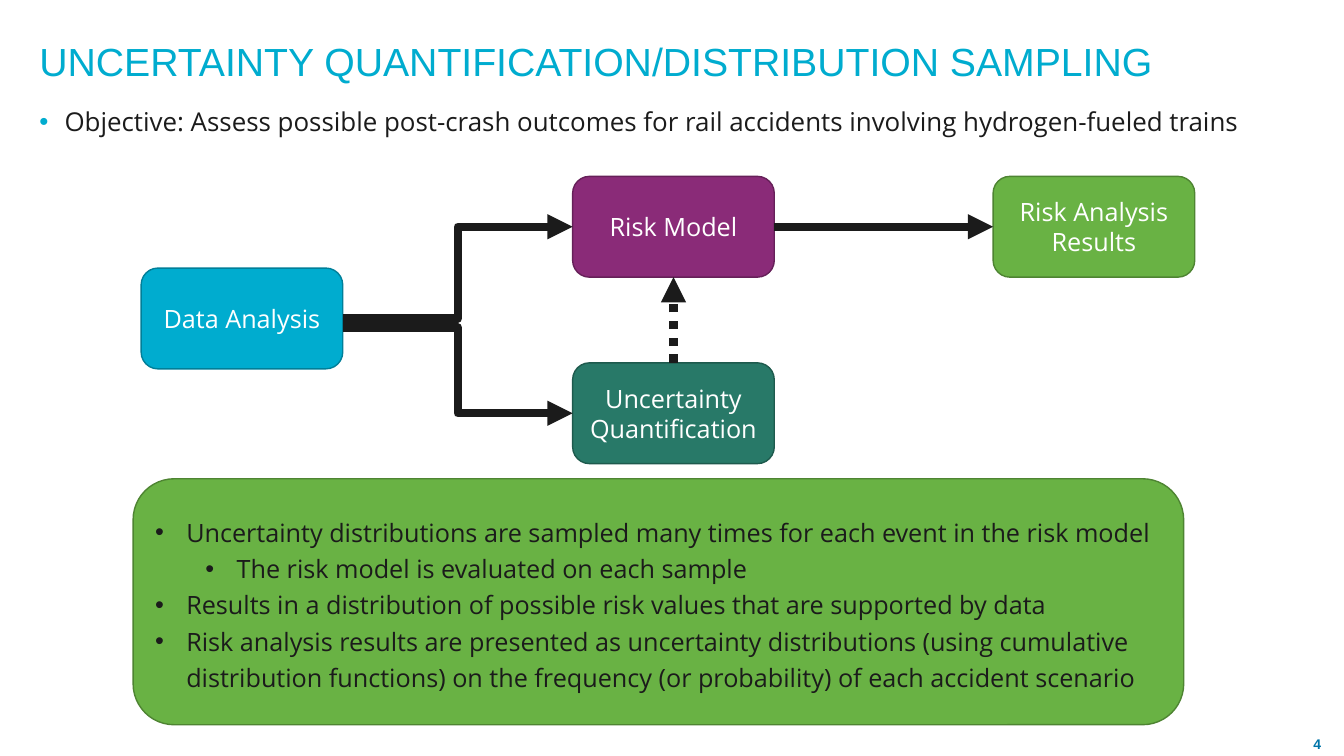
from dataclasses import dataclass
from lxml import etree
from pptx import Presentation, util as u
from pptx.dml.color import RGBColor
from pptx.enum import dml, shapes, text
from pptx.oxml.ns import qn


@dataclass(frozen=True)
class Theme:
    """Colours, fonts and type sizes of the slide."""
    ink: str = "1B1B1B"
    white: str = "FFFFFF"
    blue: tuple = ("00ACCF", "007F99")
    plum: tuple = ("8A2B78", "662059")
    teal: tuple = ("287968", "1E5A4D")
    green: tuple = ("69B244", "4E8432")
    page: str = "0075A9"
    head: str = "Arial"
    body: str = "Open Sans"
    title: float = 28
    lead: float = 18.5
    text: float = 18
    small: float = 10


class Sheet:
    """Draws on one slide, on a grid of half-inch columns and rows."""
    cell = u.Inches(0.5)

    def __init__(self, slide, theme):
        self.slide = slide
        self.theme = theme

    def grid(self, *vals):
        return [round(v * self.cell) for v in vals]

    def font(self, para, size, color, face=None, bold=False):
        font = para.font
        font.name = face or self.theme.body
        font.size = u.Pt(size)
        font.bold = bold
        font.color.rgb = RGBColor.from_string(color)

    def bullet(self, para, left, hang, color=None):
        props = para._p.get_or_add_pPr()
        props.set("marL", str(u.Inches(left)))
        props.set("indent", str(-u.Inches(hang)))
        if color:
            tint = etree.SubElement(props, qn("a:buClr"))
            etree.SubElement(tint, qn("a:srgbClr"), val=color)
        etree.SubElement(props, qn("a:buFont"), typeface="Arial")
        etree.SubElement(props, qn("a:buChar"), char="•")

    def label(self, words, spot, anchor=text.MSO_ANCHOR.TOP, inset=True):
        frame = self.slide.shapes.add_textbox(*self.grid(*spot)).text_frame
        frame.word_wrap = True
        frame.vertical_anchor = anchor
        if not inset:
            frame.margin_left = frame.margin_right = 0
            frame.margin_top = frame.margin_bottom = 0
        para = frame.paragraphs[0]
        para.text = words
        return para

    def card(self, spot, paint):
        card = self.slide.shapes.add_shape(
            shapes.MSO_SHAPE.ROUNDED_RECTANGLE, *self.grid(*spot))
        card.shadow.inherit = False
        fill, edge = paint
        card.fill.solid()
        card.fill.fore_color.rgb = RGBColor.from_string(fill)
        card.line.color.rgb = RGBColor.from_string(edge)
        card.line.width = u.Pt(1)
        card.text_frame.word_wrap = True
        card.text_frame.vertical_anchor = text.MSO_ANCHOR.MIDDLE
        return card

    def step(self, words, col, row, paint):
        card = self.card((col, row, 4, 2), paint)
        para = card.text_frame.paragraphs[0]
        para.text = words
        para.alignment = text.PP_ALIGN.CENTER
        self.font(para, self.theme.text, self.theme.white)
        return card

    def panel(self, items, spot, paint):
        frame = self.card(spot, paint).text_frame
        for i, (level, words) in enumerate(items):
            para = frame.add_paragraph() if i else frame.paragraphs[0]
            para.text = words
            para.level = level
            para.alignment = text.PP_ALIGN.LEFT
            para.line_spacing = 1.2
            self.bullet(para, 0.31 + 0.5 * level, 0.31)
            self.font(para, self.theme.text, self.theme.ink)

    def arrow(self, start, end, bent=False, dots=False):
        kind = shapes.MSO_CONNECTOR.ELBOW if bent else shapes.MSO_CONNECTOR.STRAIGHT
        link = self.slide.shapes.add_connector(kind, *self.grid(*start, *end))
        link.line.width = u.Pt(6)
        link.line.color.rgb = RGBColor.from_string(self.theme.ink)
        if dots:
            link.line.dash_style = dml.MSO_LINE.ROUND_DOT
        props = link._element.spPr
        etree.SubElement(props.find(qn("a:ln")), qn("a:tailEnd"), type="triangle")
        etree.SubElement(props, qn("a:effectLst"))
        return link


def main():
    deck = Presentation()
    deck.slide_width, deck.slide_height = u.Inches(13.33), u.Inches(7.5)
    look = Theme()
    sheet = Sheet(deck.slides.add_slide(deck.slide_layouts[6]), look)
    mid = text.MSO_ANCHOR.MIDDLE

    title = sheet.label("UNCERTAINTY QUANTIFICATION/DISTRIBUTION SAMPLING",
                        (0.78, 0.52, 22.36, 1.48), mid, inset=False)
    title.line_spacing = 0.9
    sheet.font(title, look.title, look.blue[0], look.head)

    page = sheet.label("4", (25.6, 14.52, 1.06, 0.48), mid)
    page.alignment = text.PP_ALIGN.CENTER
    sheet.font(page, look.small, look.page, look.head, bold=True)

    goal = sheet.label("Objective: Assess possible post-crash outcomes for rail "
                       "accidents involving hydrogen-fueled trains",
                       (0.78, 2.1, 24.58, 1.32), inset=False)
    goal.space_after = u.Pt(6)
    sheet.bullet(goal, 0.25, 0.25, look.blue[0])
    sheet.font(goal, look.lead, look.ink)

    sheet.panel([
        (0, "Uncertainty distributions are sampled many times for each event "
            "in the risk model"),
        (1, "The risk model is evaluated on each sample"),
        (0, "Results in a distribution of possible risk values that are "
            "supported by data"),
        (0, "Risk analysis results are presented as uncertainty distributions "
            "(using cumulative distribution functions) on the frequency "
            "(or probability) of each accident scenario"),
    ], (2.64, 9.5, 20.84, 4.88), look.green)

    model = sheet.step("Risk Model", 11.36, 3.5, look.plum)
    doubt = sheet.step("Uncertainty Quantification", 11.36, 7.2, look.teal)
    result = sheet.step("Risk Analysis Results", 19.7, 3.5, look.green)
    sheet.step("Data Analysis", 2.8, 5.32, look.blue)

    for start, end in ((6.32, 4.5), (6.5, 8.2)):
        sheet.arrow((6.8, start), (11.36, end), bent=True)
    across = sheet.arrow((15.36, 4.5), (19.7, 4.5))
    across.begin_connect(model, 3)
    across.end_connect(result, 1)
    rise = sheet.arrow((13.36, 7.2), (13.36, 5.5), dots=True)
    rise.begin_connect(doubt, 0)
    rise.end_connect(model, 2)

    deck.save("out.pptx")


if __name__ == "__main__":
    main()
